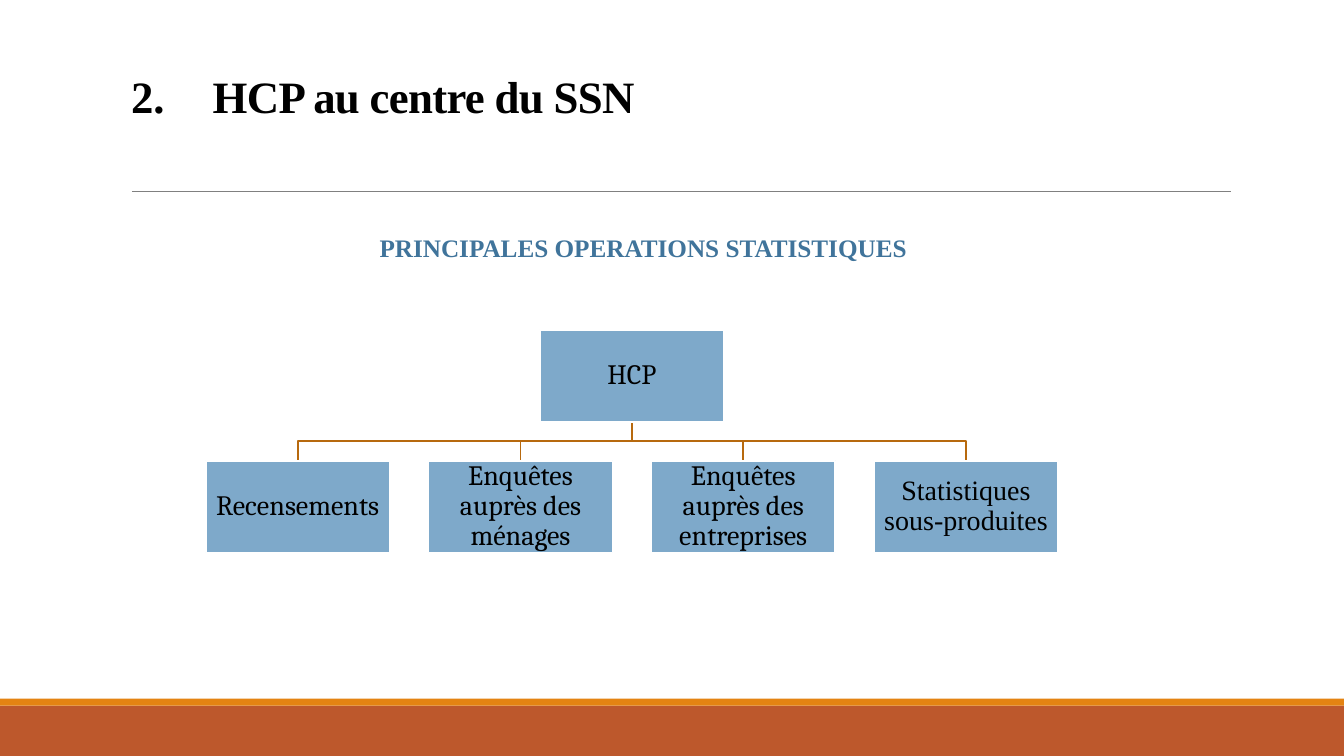
"""Build the slide on the HCP and its main statistical operations."""
import lxml.etree
import pptx
import pptx.util
import pptx.dml.color
import pptx.enum.shapes
import pptx.enum.text
import pptx.oxml.ns

Pt = pptx.util.Pt
RGBColor = pptx.dml.color.RGBColor
Align = pptx.enum.text.PP_ALIGN
Anchor = pptx.enum.text.MSO_ANCHOR
RECT = pptx.enum.shapes.MSO_SHAPE.RECTANGLE
STRAIGHT = pptx.enum.shapes.MSO_CONNECTOR.STRAIGHT
qn = pptx.oxml.ns.qn

BLACK = RGBColor(0x00, 0x00, 0x00)
WHITE = RGBColor(0xFF, 0xFF, 0xFF)
GRAY = RGBColor(0x80, 0x80, 0x80)
RUST = RGBColor(0xBD, 0x58, 0x2C)
ORANGE = RGBColor(0xE4, 0x83, 0x12)
BROWN = RGBColor(0xB7, 0x69, 0x0E)
BLUE = RGBColor(0x7E, 0xA9, 0xCA)
NAVY = RGBColor(0x40, 0x74, 0x9B)
SERIF = "Times New Roman"


def style(par, font, size, color, bold=False):
    for run in par.runs:
        run.font.name = font
        run.font.size = Pt(size)
        run.font.color.rgb = color
        run.font.bold = bold


def block(left, top, width, height, fill):
    rect = slide.shapes.add_shape(RECT, Pt(left), Pt(top), Pt(width), Pt(height))
    rect.shadow.inherit = False
    rect.fill.solid()
    rect.fill.fore_color.rgb = fill
    rect.line.fill.background()
    return rect


deck = pptx.Presentation()
deck.slide_width = Pt(960)
deck.slide_height = Pt(540)
slide = deck.slides.add_slide(deck.slide_layouts[5])

block(0, 504, 960, 36, RUST)
block(0, 499, 960, 5, ORANGE)

rule = slide.shapes.add_connector(STRAIGHT, Pt(94.3), Pt(136.8), Pt(879), Pt(136.8))
rule.line.color.rgb = GRAY
rule.line.width = Pt(0.5)
lxml.etree.SubElement(rule._element.spPr, qn("a:effectLst"))

title = slide.shapes.title
title.left, title.top, title.width, title.height = Pt(86.4), Pt(22.3), Pt(792), Pt(69.1)
title.text_frame.text = "HCP au centre du SSN"
title.text_frame.vertical_anchor = Anchor.BOTTOM
title.text_frame.auto_size = pptx.enum.text.MSO_AUTO_SIZE.NONE
head = title.text_frame.paragraphs[0]
head.alignment = Align.JUSTIFY
head.line_spacing = 0.85
style(head, SERIF, 32, BLACK, True)
head.runs[0].font._element.set("spc", "-50")
props = head._p.get_or_add_pPr()
props.set("marL", str(Pt(58.3)))
props.set("indent", str(Pt(-58.3)))
lxml.etree.SubElement(props, qn("a:buFont"), typeface=SERIF)
lxml.etree.SubElement(props, qn("a:buAutoNum"), type="arabicPeriod", startAt="2")

label = slide.shapes.add_textbox(Pt(264), Pt(162.7), Pt(406.8), Pt(29))
label.text_frame.word_wrap = True
label.text_frame.text = "PRINCIPALES OPERATIONS STATISTIQUES"
style(label.text_frame.paragraphs[0], SERIF, 18, NAVY, True)

WIDE, HIGH, STEP = 131.6, 65.6, 159.1
LEFT, TOP, ROW = 146.9, 235.7, 329.1
MID = LEFT + 1.5 * STEP
AXIS = MID + WIDE / 2
BASE = TOP + HIGH
BEND = (BASE + ROW) / 2

nodes = [("HCP", MID, TOP, "Cambria")]
leaves = [
    ("Recensements", "Cambria"),
    ("Enquêtes auprès des ménages", "Cambria"),
    ("Enquêtes auprès des entreprises", "Cambria"),
    ("Statistiques sous-produites", SERIF),
]
for i, (text, font) in enumerate(leaves):
    left = LEFT + i * STEP
    nodes.append((text, left, ROW, font))
    end = left + WIDE / 2
    trace = slide.shapes.build_freeform(Pt(AXIS), Pt(BASE))
    trace.add_line_segments(
        [(Pt(AXIS), Pt(BEND)), (Pt(end), Pt(BEND)), (Pt(end), Pt(ROW))], close=False
    )
    link = trace.convert_to_shape()
    link.shadow.inherit = False
    link.fill.background()
    link.line.color.rgb = BROWN
    link.line.width = Pt(1.25)

for text, left, top, font in nodes:
    box = block(left, top, WIDE, HIGH, BLUE)
    box.line.color.rgb = WHITE
    box.line.width = Pt(1.25)
    frame = box.text_frame
    frame.word_wrap = True
    frame.vertical_anchor = Anchor.MIDDLE
    frame.margin_left = frame.margin_right = Pt(1)
    frame.margin_top = frame.margin_bottom = Pt(1)
    frame.text = text
    par = frame.paragraphs[0]
    par.alignment = Align.CENTER
    par.line_spacing = 0.9
    style(par, font, 20, BLACK)

deck.save("out.pptx")
